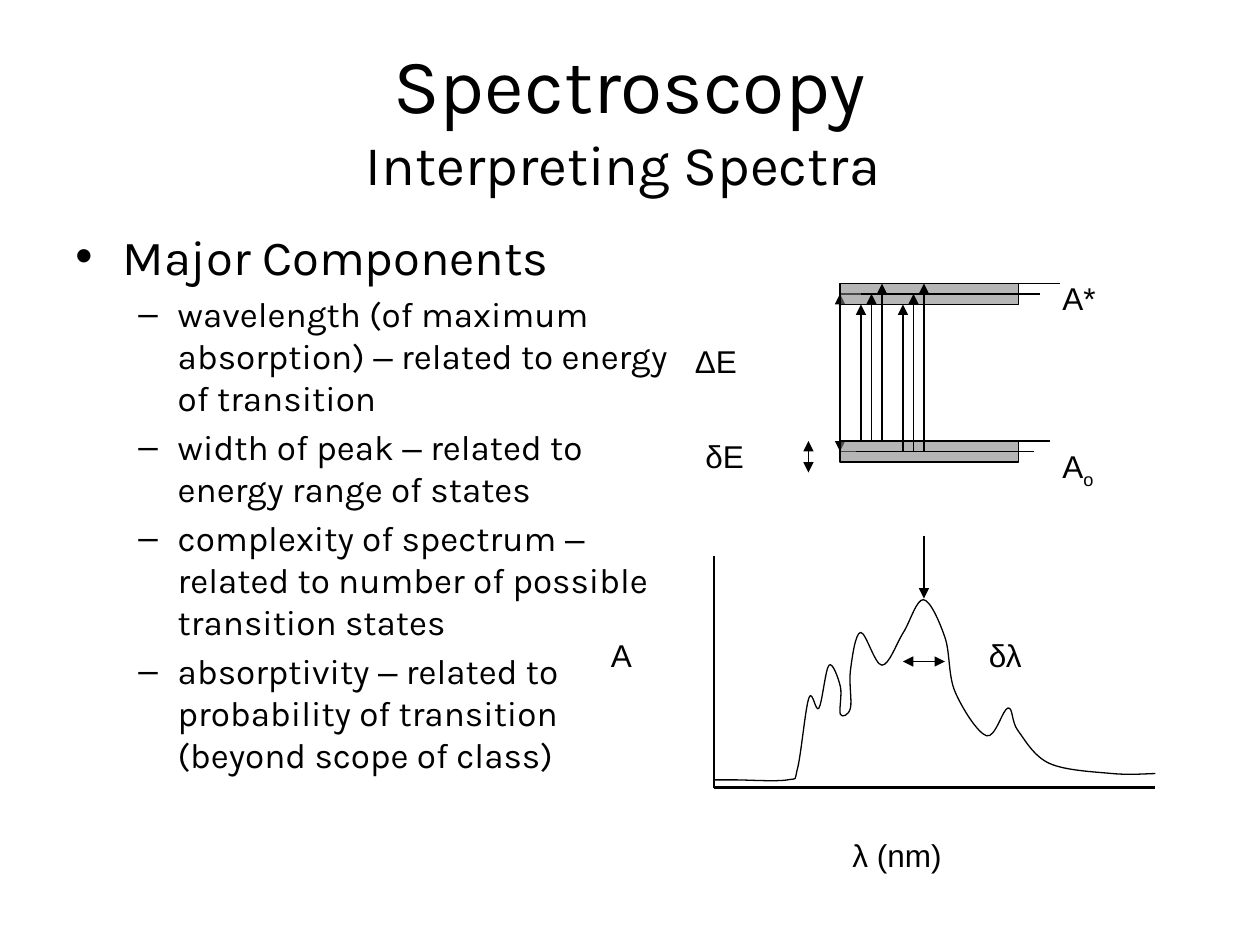
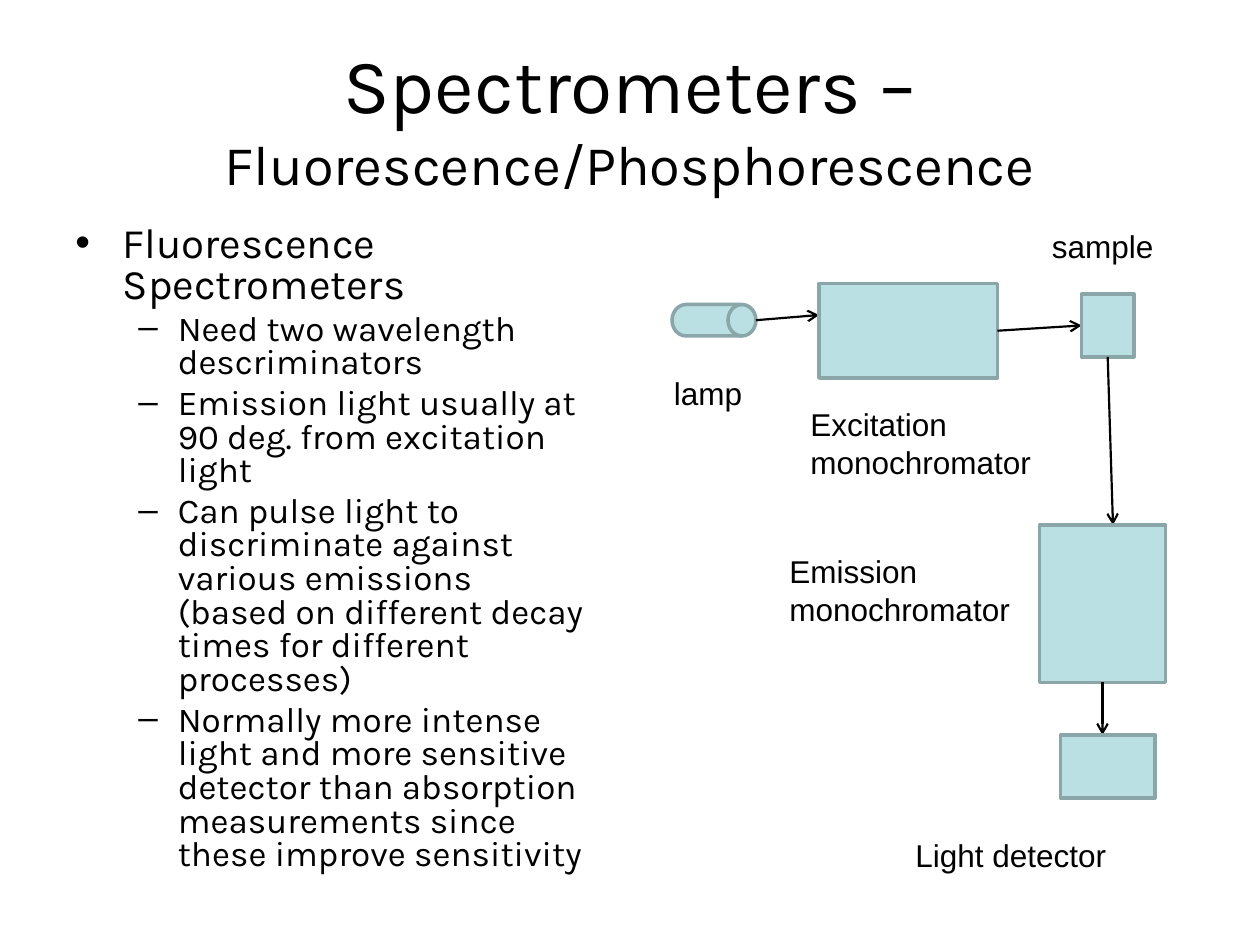
import itertools
from dataclasses import dataclass
from typing import Optional

import lxml.etree
import pptx
import pptx.dml.color
import pptx.enum.shapes
import pptx.enum.text
import pptx.oxml.ns
import pptx.util

Inches, Pt = pptx.util.Inches, pptx.util.Pt
qn = pptx.oxml.ns.qn
Kind = pptx.enum.shapes.MSO_SHAPE
Fit = pptx.enum.text.MSO_AUTO_SIZE

INK, GREY, AQUA, EDGE = "000000", "808080", "BBE0E3", "8AA6A8"
HEAD_FONT, NOTE_FONT = "Karla", "Arial"
TITLE_ONLY = 5
GRID = 48


@dataclass
class Note:
    text: str
    x: float
    y: float
    wide: float
    high: float = 0.4
    sub: str = ""


@dataclass
class Line:
    x1: float
    y1: float
    x2: float
    y2: float
    head: Optional[str] = None
    tail: Optional[str] = None
    weight: float = 0.75


@dataclass
class Box:
    x: float
    y: float
    wide: float
    high: float
    kind: Kind = Kind.RECTANGLE
    fill: str = AQUA
    edge: str = EDGE
    weight: float = 2
    alpha: int = 100


@dataclass
class Curve:
    knots: list[tuple[float, float]]


def snap(*sizes: float) -> list[int]:
    """Round lengths in inches to the drawing grid."""
    return [Inches(round(size * GRID) / GRID) for size in sizes]


def paint(target, color: str) -> None:
    """Give a fill or a line's fill one solid colour."""
    target.solid()
    target.fore_color.rgb = pptx.dml.color.RGBColor.from_string(color)


def add_run(para, text: str, size: float, font: str):
    run = para.add_run()
    run.text = text
    run.font.size, run.font.name = Pt(size), font
    paint(run.font.fill, INK)
    return run


def add_slide(deck, top: str, sub: str, split: bool):
    """Start a slide with a large title and a smaller second line."""
    slide = deck.slides.add_slide(deck.slide_layouts[TITLE_ONLY])
    title = slide.shapes.title
    title.left, title.top = Inches(0.5), Inches(0.3)
    title.width, title.height = Inches(9), Inches(1.25)
    frame = title.text_frame
    frame.word_wrap, frame.auto_size = True, Fit.NONE
    frame.vertical_anchor = pptx.enum.text.MSO_ANCHOR.MIDDLE
    para = frame.paragraphs[0]
    para.alignment = pptx.enum.text.PP_ALIGN.CENTER
    add_run(para, top, 44, HEAD_FONT)
    if split:
        para.add_line_break()
    add_run(para, sub, 32, HEAD_FONT)
    return slide


def add_frame(slide, x: float, y: float, wide: float, high: float, fit: Fit):
    frame = slide.shapes.add_textbox(*snap(x, y, wide, high)).text_frame
    frame.word_wrap, frame.auto_size = True, fit
    return frame


def add_point(para, text: str, size: float, mark: str, left: float, hang: float, pitch: float) -> None:
    """Fill a bulleted paragraph, with its dashes in the note font."""
    props = para._p.get_or_add_pPr()
    for name, size_in in zip(("marL", "indent"), snap(left, -hang)):
        props.set(name, str(size_in))
    para.space_before = Pt(size * 0.2)
    para.line_spacing = pitch
    lxml.etree.SubElement(props, qn("a:buFont")).set("typeface", NOTE_FONT)
    lxml.etree.SubElement(props, qn("a:buChar")).set("char", mark)
    start, dash, rest = text.partition("–")
    for part, font in ((start, HEAD_FONT), (dash, NOTE_FONT), (rest, HEAD_FONT)):
        if part:
            add_run(para, part, size, font)


def add_list(slide, wide: float, lead: str, size: float, points: list[str], pitch: float = 1.0) -> None:
    frame = add_frame(slide, 0.5, 1.75, wide, 4.95, Fit.NONE)
    add_point(frame.paragraphs[0], lead, size, "•", 0.38, 0.38, pitch)
    for point in points:
        para = frame.add_paragraph()
        para.level = 1
        add_point(para, point, 20, "–", 0.81, 0.31, pitch)


def add_note(slide, note: Note) -> None:
    frame = add_frame(slide, note.x, note.y, note.wide, note.high, Fit.SHAPE_TO_FIT_TEXT)
    for num, text in enumerate(note.text.split("\n")):
        para = frame.add_paragraph() if num else frame.paragraphs[0]
        add_run(para, text, 18, NOTE_FONT)
    if note.sub:
        run = add_run(para, note.sub, 18, NOTE_FONT)
        run.font._element.set("baseline", "-25000")


def add_line(slide, line: Line) -> None:
    shape = slide.shapes.add_connector(
        pptx.enum.shapes.MSO_CONNECTOR.STRAIGHT, *snap(line.x1, line.y1, line.x2, line.y2))
    shape.line.width = Pt(line.weight)
    paint(shape.line.fill, INK)
    props = shape._element.spPr
    for tag, tip in (("a:headEnd", line.head), ("a:tailEnd", line.tail)):
        if tip:
            lxml.etree.SubElement(props.find(qn("a:ln")), qn(tag)).set("type", tip)
    lxml.etree.SubElement(props, qn("a:effectLst"))


def add_box(slide, box: Box) -> None:
    shape = slide.shapes.add_shape(box.kind, *snap(box.x, box.y, box.wide, box.high))
    shape.shadow.inherit = False
    paint(shape.fill, box.fill)
    paint(shape.line.fill, box.edge)
    shape.line.width = Pt(box.weight)
    if box.alpha < 100:
        color = shape._element.spPr.find(qn("a:solidFill"))[0]
        lxml.etree.SubElement(color, qn("a:alpha")).set("val", str(box.alpha * 1000))


def add_curve(slide, curve: Curve) -> None:
    """Join the knots, then bend each segment into a smooth cubic."""
    knots = [(Inches(x), Inches(y)) for x, y in curve.knots]
    pen = slide.shapes.build_freeform(*knots[0])
    pen.add_line_segments(knots[1:], close=False)
    shape = pen.convert_to_shape()
    shape.shadow.inherit = False
    shape.fill.background()
    paint(shape.line.fill, INK)
    shape.line.width = Pt(0.75)
    padded = [knots[0], *knots, knots[-1]]
    quads = zip(padded, padded[1:], padded[2:], padded[3:])
    for part, (prior, start, end, after) in zip(list(shape._element.iter(qn("a:lnTo"))), quads):
        part.tag = qn("a:cubicBezTo")
        pulls = ((start, prior, end, 1), (end, start, after, -1))
        for spot, (base, back, front, sign) in enumerate(pulls):
            x, y = (b + sign * (f - k) / 6 for b, k, f in zip(base, back, front))
            point = lxml.etree.Element(qn("a:pt"))
            point.set("x", str(round(x - shape.left)))
            point.set("y", str(round(y - shape.top)))
            part.insert(spot, point)


def draw(slide, parts: list) -> None:
    """Draw the parts from back to front."""
    tools = {Note: add_note, Line: add_line, Box: add_box, Curve: add_curve}
    for part in parts:
        tools[type(part)](slide, part)


def build_spectra(deck) -> None:
    slide = add_slide(deck, "Spectroscopy", "Interpreting Spectra ", True)
    add_list(slide, 4.92, "Major Components", 28, [
        "wavelength (of maximum absorption) – related to energy of transition",
        "width of peak – related to energy range of states",
        "complexity of spectrum – related to number of possible transition states",
        "absorptivity – related to probability of transition (beyond scope of class)",
    ])
    high, mid, low = 2.25, 2.33, 2.42
    floor, ground = 3.5, 3.58
    tip = "triangle"
    shade = dict(fill=GREY, edge=INK, weight=0.75)
    levels = [(6.67, low), (6.83, mid), (6.92, floor), (6.79, ground), (7, high)]
    jumps = zip((6.83, 6.92, 7, 7.17, 7.25, 7.33), itertools.cycle((low, mid, high)))
    draw(slide, [
        Line(6.67, ground, 8.17, ground),
        Note("A", 8.33, 3.5, 0.92, sub="o"),
        Line(6.67, mid, 8.17, mid),
        Note("A*", 8.33, 2.17, 0.92),
        Line(6.67, mid, 6.67, ground, tip, tip),
        Note("ΔE", 5.42, 2.67, 1.08),
        Box(6.67, floor, 1.42, 0.17, alpha=58, **shade),
        Box(6.67, high, 1.42, 0.17, alpha=57, **shade),
        Note("δE", 5.5, 3.42, 1.08),
        Line(6.42, floor, 6.42, 3.75, tip, tip),
        *(Line(x, y, x + 1.42, y) for x, y in levels),
        *(Line(x, floor if x < 7.1 else ground, x, y, tail=tip) for x, y in jumps),
        Line(5.67, 4.42, 5.67, 6.25, weight=1.5),
        Line(5.67, 6.25, 9.17, 6.25, weight=1.5),
        Note("A", 4.75, 5, 0.58),
        Note("λ (nm)", 6.67, 6.58, 1.58),
        Curve([
            (5.67, 6.19), (5.83, 6.19), (6.25, 6.19), (6.33, 6.1), (6.42, 5.54),
            (6.5, 5.62), (6.58, 5.28), (6.67, 5.45), (6.67, 5.67), (6.75, 5.62),
            (6.75, 5.32), (6.83, 5.02), (7, 5.28), (7.17, 5.02), (7.33, 4.76),
            (7.5, 5.06), (7.58, 5.49), (7.83, 5.84), (8, 5.62), (8.08, 5.8),
            (8.33, 6.06), (8.83, 6.14), (9.17, 6.14),
        ]),
        Line(7.33, 4.25, 7.33, 4.75, tail=tip),
        Line(7.17, 5.25, 7.5, 5.25, tip, tip),
        Note("δλ", 7.75, 5, 0.75),
    ])


def beam(x1: float, y1: float, x2: float, y2: float) -> Line:
    return Line(x1, y1, x2, y2, tail="arrow", weight=1.25)


def build_meter(deck) -> None:
    slide = add_slide(deck, "Spectrometers – ", "Fluorescence/Phosphorescence", False)
    add_list(slide, 4.25, "Fluorescence Spectrometers", 24, [
        "Need two wavelength descriminators",
        "Emission light usually at 90 deg. from excitation light",
        "Can pulse light to discriminate against various emissions "
        "(based on different decay times for different processes)",
        "Normally more intense light and more sensitive detector than "
        "absorption measurements since these improve sensitivity",
    ], 0.8)
    draw(slide, [
        Box(5.33, 2.42, 0.67, 0.25, Kind.FLOWCHART_DIRECT_ACCESS_STORAGE),
        Note("lamp", 5.25, 2.92, 0.83),
        beam(6, 2.54, 6.5, 2.5),
        Box(6.5, 2.25, 1.42, 0.75),
        Note("Excitation\nmonochromator", 6.33, 3.17, 2, 0.71),
        beam(7.92, 2.62, 8.58, 2.58),
        Box(8.58, 2.33, 0.42, 0.5),
        Note("sample", 8.25, 1.75, 1.17),
        beam(8.79, 2.83, 8.83, 4.17),
        Box(8.25, 4.17, 1, 1.25),
        Note("Emission monochromator", 6.17, 4.33, 2, 0.71),
        beam(8.75, 5.42, 8.75, 5.83),
        Box(8.42, 5.83, 0.75, 0.5),
        Note("Light detector", 7.17, 6.58, 2),
    ])


def main() -> None:
    deck = pptx.Presentation()
    deck.slide_width, deck.slide_height = Inches(10), Inches(7.5)
    build_spectra(deck)
    build_meter(deck)
    deck.save("out.pptx")


if __name__ == "__main__":
    main()
